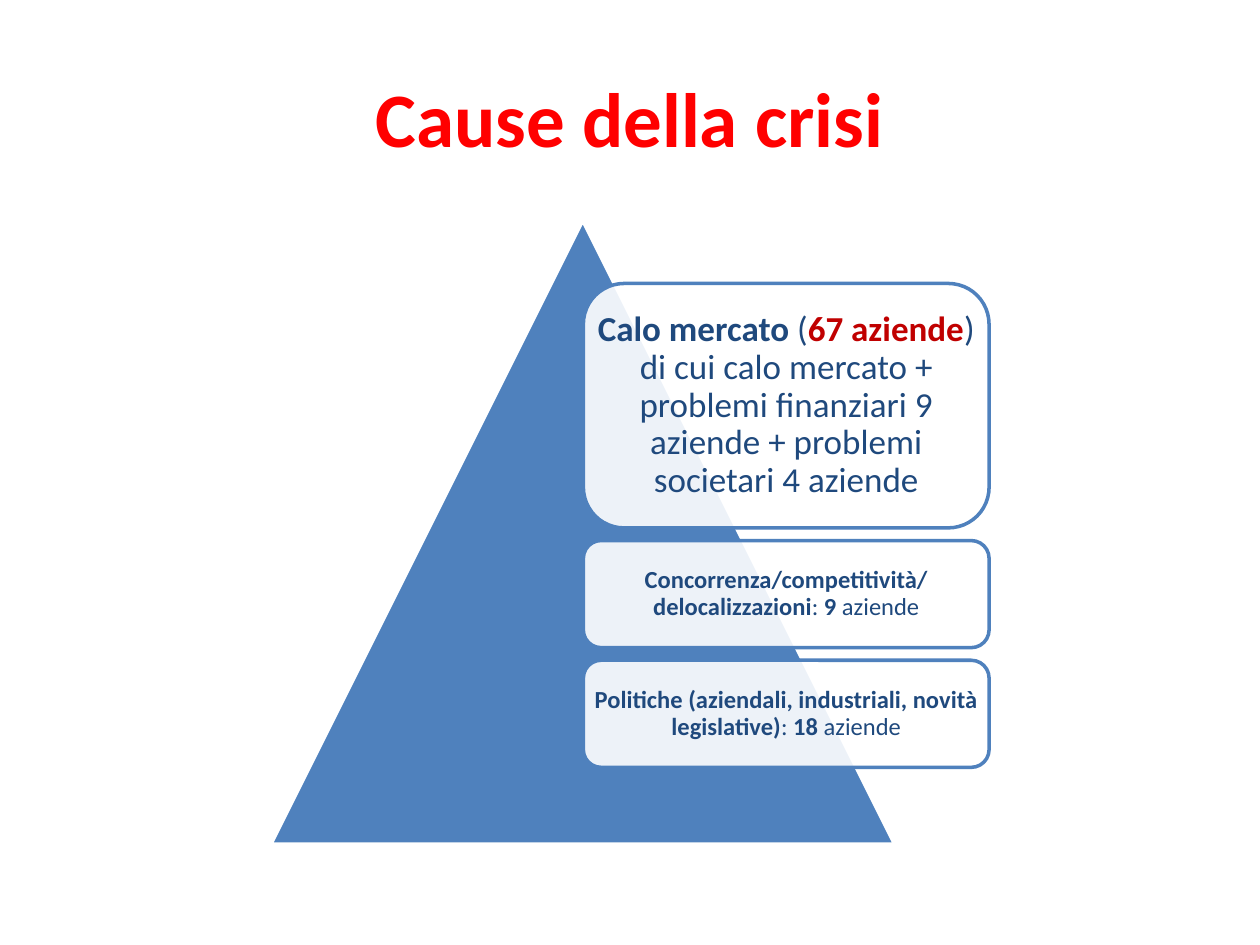
from dataclasses import dataclass

import pptx
import pptx.dml.color
import pptx.enum.shapes
import pptx.enum.text
import pptx.oxml.ns
import pptx.util
from lxml import etree

RGBColor = pptx.dml.color.RGBColor
WHITE = RGBColor(0xFF, 0xFF, 0xFF)
RED = RGBColor(0xFF, 0x00, 0x00)
DARK_RED = RGBColor(0xC0, 0x00, 0x00)
BLUE = RGBColor(0x4F, 0x81, 0xBD)
NAVY = RGBColor(0x1F, 0x49, 0x7D)

FONT = "Calibri"
PIXELS_PER_INCH = 100
CARD_LEFT, CARD_TOP, CARD_WIDTH, CARD_GAP = 463, 225, 322, 10


@dataclass(frozen=True)
class Box:
    left: int
    top: int
    width: int
    height: int

    def emu(self) -> list[int]:
        return [px(value) for value in (self.left, self.top, self.width, self.height)]


@dataclass(frozen=True)
class Segment:
    text: str
    bold: bool = False
    color: RGBColor = NAVY


@dataclass(frozen=True)
class Card:
    height: int
    margin: int
    font_size: int
    segments: tuple[Segment, ...]


CARDS = (
    Card(194, 8, 20, (
        Segment("Calo mercato ", True),
        Segment("("),
        Segment("67 aziende", True, DARK_RED),
        Segment(") di cui calo mercato + problemi finanziari 9 aziende"
                " + problemi societari 4 aziende"),
    )),
    Card(85, 6, 14, (
        Segment("Concorrenza/competitività/delocalizzazioni", True),
        Segment(": "),
        Segment("9", True),
        Segment(" aziende"),
    )),
    Card(85, 6, 14, (
        Segment("Politiche (aziendali, industriali, novità legislative)", True),
        Segment(": "),
        Segment("18", True),
        Segment(" aziende"),
    )),
)


def px(value: int) -> int:
    return value * pptx.util.Inches(1) // PIXELS_PER_INCH


def add_filled_shape(slide, kind, box: Box, fill: RGBColor, line: RGBColor):
    shape = slide.shapes.add_shape(kind, *box.emu())
    shape.shadow.inherit = False
    shape.fill.solid()
    shape.fill.fore_color.rgb = fill
    shape.line.color.rgb = line
    shape.line.width = pptx.util.Pt(2)
    return shape


def set_opacity(shape, percent: int) -> None:
    qualify = pptx.oxml.ns.qn
    color = shape.fill._xPr.find(qualify("a:solidFill")).find(qualify("a:srgbClr"))
    etree.SubElement(color, qualify("a:alpha")).set("val", str(percent * 1000))


def add_text(slide, box: Box, segments: tuple[Segment, ...], font_size: int,
             margin: int, line_spacing: float = 1.0) -> None:
    frame = slide.shapes.add_textbox(*box.emu()).text_frame
    frame.word_wrap = True
    frame.vertical_anchor = pptx.enum.text.MSO_ANCHOR.MIDDLE
    frame.margin_left = frame.margin_right = px(margin)
    frame.margin_top = frame.margin_bottom = px(margin)
    paragraph = frame.paragraphs[0]
    paragraph.alignment = pptx.enum.text.PP_ALIGN.CENTER
    paragraph.line_spacing = line_spacing
    for segment in segments:
        run = paragraph.add_run()
        run.text = segment.text
        run.font.name = FONT
        run.font.size = pptx.util.Pt(font_size)
        run.font.bold = segment.bold
        run.font.color.rgb = segment.color


def add_card(slide, card: Card, top: int) -> None:
    box = Box(CARD_LEFT, top, CARD_WIDTH, card.height)
    rounded = pptx.enum.shapes.MSO_SHAPE.ROUNDED_RECTANGLE
    set_opacity(add_filled_shape(slide, rounded, box, WHITE, BLUE), 90)
    add_text(slide, box, card.segments, card.font_size, card.margin, 0.9)


def main() -> None:
    presentation = pptx.Presentation()
    presentation.slide_width = px(1000)
    presentation.slide_height = px(750)
    slide = presentation.slides.add_slide(presentation.slide_layouts[6])

    title = (Segment("Cause della crisi", True, RED),)
    add_text(slide, Box(50, 30, 900, 125), title, 44, 5)
    triangle = pptx.enum.shapes.MSO_SHAPE.ISOSCELES_TRIANGLE
    add_filled_shape(slide, triangle, Box(215, 175, 495, 495), BLUE, WHITE)

    top = CARD_TOP
    for card in CARDS:
        add_card(slide, card, top)
        top += card.height + CARD_GAP

    presentation.save("out.pptx")


if __name__ == "__main__":
    main()
